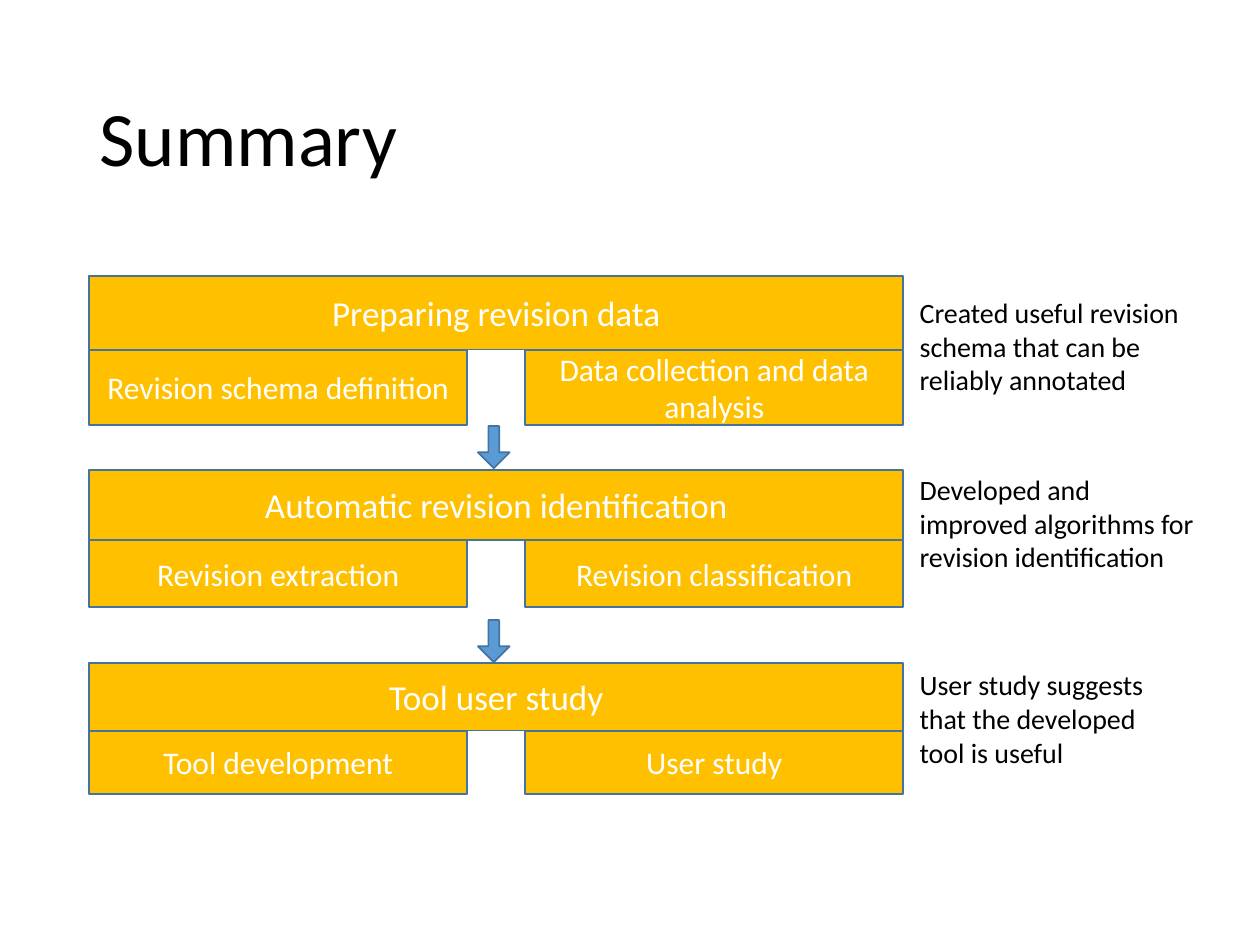
from pptx import Presentation
from pptx.dml.color import RGBColor
from pptx.enum.shapes import MSO_SHAPE as Shape
from pptx.enum.text import MSO_ANCHOR as Anchor, PP_ALIGN as Align
from pptx.util import Cm, Pt

FONT = "Calibri"
BLACK, WHITE = "000000", "FFFFFF"
GOLD, BLUE, OUTLINE = "FFC000", "5B9BD5", "43739E"

LEFT, WIDTH = 1.8, 16.41
SUB_WIDTH = 7.62
NOTE_LEFT = 18.29
ARROW_WIDTH, ARROW_HEIGHT = 0.64, 0.85

# top, heading height, part height, heading, parts, note, note top, note width
STAGES = [
    (5.56, 1.49, 1.52, "Preparing revision data",
     ("Revision schema definition", "Data collection and data analysis"),
     "Created useful revision schema that can be reliably annotated", 5.84, 5.92),
    (9.47, 1.42, 1.35, "Automatic revision identification",
     ("Revision extraction", "Revision classification"),
     "Developed and improved algorithms for revision identification", 9.4, 6.15),
    (13.36, 1.37, 1.28, "Tool user study",
     ("Tool development", "User study"),
     "User study suggests that the developed tool is useful", 13.34, 5.77),
]
ARROW_TOPS = (8.59, 12.5)


def color(value):
    return RGBColor.from_string(value)


def write(shape, text, size, text_color, align, anchor):
    frame = shape.text_frame
    frame.word_wrap = True
    frame.vertical_anchor = anchor
    frame.text = text
    paragraph = frame.paragraphs[0]
    paragraph.alignment = align
    font = paragraph.font
    font.name, font.size = FONT, Pt(size)
    font.color.rgb = color(text_color)
    return paragraph


def add_filled(slide, kind, left, top, width, height, fill):
    shape = slide.shapes.add_shape(kind, Cm(left), Cm(top), Cm(width), Cm(height))
    shape.shadow.inherit = False
    shape.fill.solid()
    shape.fill.fore_color.rgb = color(fill)
    shape.line.color.rgb = color(OUTLINE)
    shape.line.width = Pt(1)
    return shape


def add_box(slide, left, top, width, height, text, size):
    box = add_filled(slide, Shape.RECTANGLE, left, top, width, height, GOLD)
    write(box, text, size, WHITE, Align.CENTER, Anchor.MIDDLE)


def add_title(slide, left, top, width, height, text):
    title = slide.shapes.title
    title.left, title.top = Cm(left), Cm(top)
    title.width, title.height = Cm(width), Cm(height)
    paragraph = write(title, text, 44, BLACK, Align.LEFT, Anchor.MIDDLE)
    paragraph.line_spacing = 0.9


def add_stage(slide, left, top, width, head_height, part_height, heading, parts):
    """A full-width heading with one part under each end."""
    add_box(slide, left, top, width, head_height, heading, 20)
    for part_left, part in zip((left, left + width - SUB_WIDTH), parts):
        add_box(slide, part_left, top + head_height, SUB_WIDTH, part_height, part, 18)


def add_note(slide, left, top, width, text):
    note = slide.shapes.add_textbox(Cm(left), Cm(top), Cm(width), Cm(2.31))
    write(note, text, 16, BLACK, Align.LEFT, Anchor.TOP)


def add_arrow(slide, center, top):
    arrow = add_filled(slide, Shape.DOWN_ARROW, center - ARROW_WIDTH / 2, top,
                       ARROW_WIDTH, ARROW_HEIGHT, BLUE)
    arrow.adjustments[0] = 0.34
    arrow.adjustments[1] = 0.5


def main():
    presentation = Presentation()
    presentation.slide_width, presentation.slide_height = Cm(25.4), Cm(19.05)
    slide = presentation.slides.add_slide(presentation.slide_layouts[5])

    add_title(slide, 1.75, 1.02, 21.9, 3.68, "Summary")

    # Stages with their results at the right
    for top, head, part, heading, parts, note, note_top, note_width in STAGES:
        add_stage(slide, LEFT, top, WIDTH, head, part, heading, parts)
        add_note(slide, NOTE_LEFT, note_top, note_width, note)

    # Arrows between the stages
    for top in ARROW_TOPS:
        add_arrow(slide, LEFT + WIDTH / 2 - 0.05, top)

    presentation.save("out.pptx")


if __name__ == "__main__":
    main()
